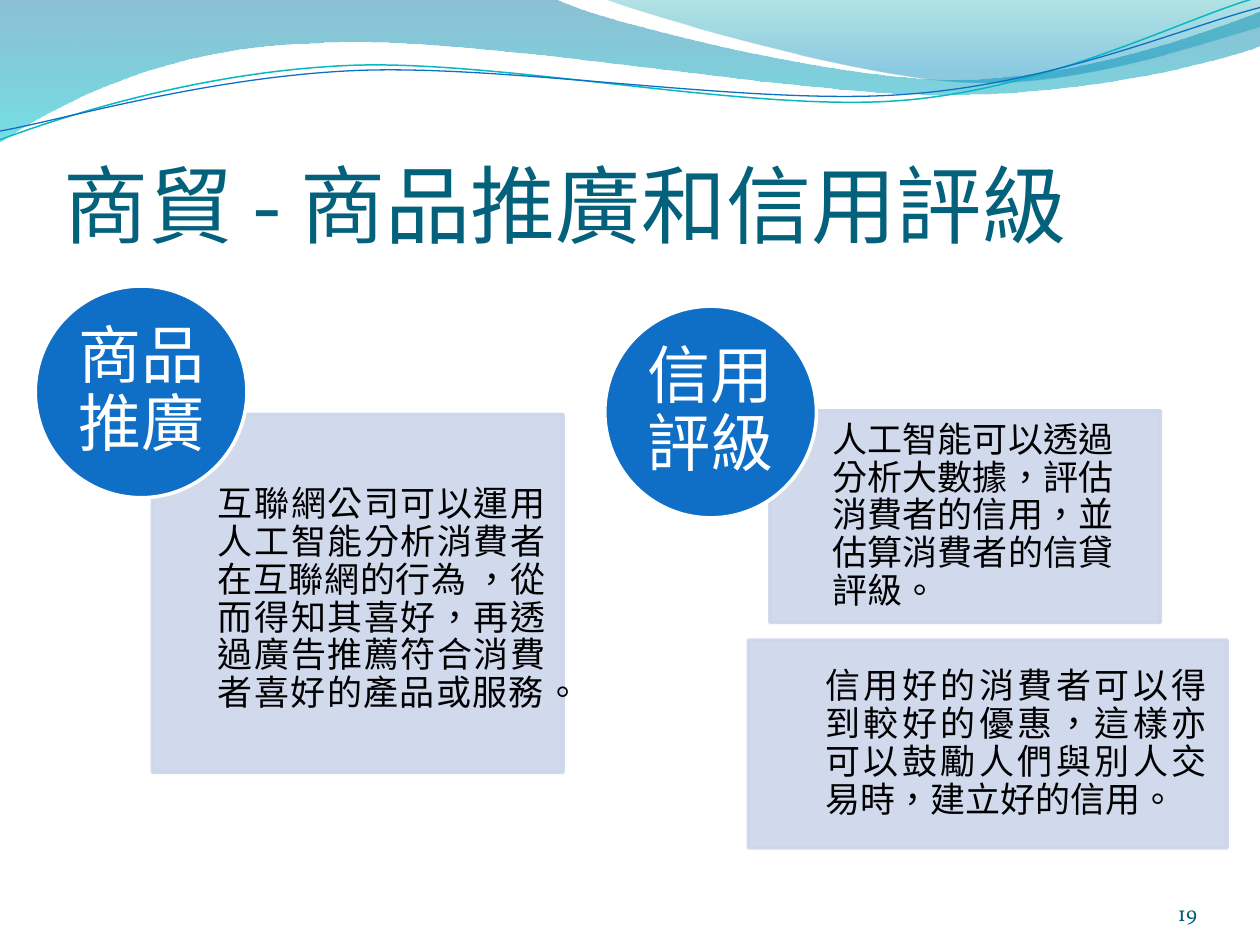
from dataclasses import dataclass
from itertools import chain
from math import sqrt

from lxml.etree import Element, SubElement
from pptx import Presentation
from pptx.dml.color import RGBColor
from pptx.enum.lang import MSO_LANGUAGE_ID as Language
from pptx.enum.shapes import MSO_SHAPE as Shape
from pptx.enum.text import MSO_ANCHOR as Anchor, MSO_AUTO_SIZE as AutoSize, PP_ALIGN as Align
from pptx.oxml.ns import qn
from pptx.util import Inches, Pt


@dataclass(frozen=True)
class Theme:
    title: str = "04617B"
    accent: str = "0F6FC6"
    panel: str = "CCD5EA"
    light: str = "FFFFFF"
    text: str = "000000"
    number: str = "045D75"
    teal_line: str = "0AB8BF"
    sans: str = "Noto Sans CJK SC"
    serif: str = "Vollkorn"
    title_size: float = 48.6
    circle_size: float = 36
    body_size: float = 20
    number_size: float = 12


THEME = Theme()
CIRCLE = 1.68
UNITS_PER_INCH = 1000

# Each wave is a start point followed by segments: one point for a line,
# three (two controls and an end) for a Bezier curve.
BROAD_WAVE = [
    (0, 0), [(4.4, -0.01)],
    [(4.76, 0.17), (6.64, 0.63), (7.58, 0.63)],
    [(8.53, 0.63), (9.58, 0.26), (10, 0.09)],
    [(10.01, 0.36)],
    [(9.83, 0.44), (8.7, 0.76), (7.46, 0.75)],
    [(6.22, 0.75), (3.82, 0.28), (2.57, 0.34)],
    [(1.29, 0.36), (0.46, 0.83), (-0.01, 1.13)],
    [(0, 0)],
]
RIGHT_WAVE = [
    (4.79, -0.01),
    [(5.09, 0.11), (6.82, 0.62), (7.69, 0.65)],
    [(8.56, 0.69), (9.61, 0.32), (10, 0.21)],
    [(10, 0)],
    [(4.79, -0.01)],
]
TEAL_CURVE = [
    (0, 1.11),
    [(0.48, 0.93), (1.58, 0.57), (2.77, 0.52)],
    [(3.95, 0.47), (5.93, 0.89), (7.13, 0.8)],
    [(8.33, 0.71), (9.38, 0.15), (9.98, -0.02)],
]
BLUE_CURVE = [
    (0, 1.04),
    [(0.47, 0.96), (1.64, 0.61), (2.83, 0.56)],
    [(4.03, 0.51), (5.97, 0.84), (7.17, 0.75)],
    [(8.36, 0.67), (9.41, 0.21), (10, 0.06)],
]


def rgb(color):
    return RGBColor.from_string(color)


def set_alpha(parent, percent):
    """Make every RGB colour under an XML element partly transparent."""
    for color in parent.iter(qn("a:srgbClr")):
        SubElement(color, qn("a:alpha")).set("val", str(percent * 1000))


def add_outline(slide, outline, close):
    """Add a freeform, then join each group of three points into a Bezier curve."""
    start, *segments = outline
    points = [(x * UNITS_PER_INCH, y * UNITS_PER_INCH)
              for x, y in chain([start], *segments)]
    builder = slide.shapes.build_freeform(*points[0], scale=Inches(1) / UNITS_PER_INCH)
    builder.add_line_segments(points[1:], close=close)
    shape = builder.convert_to_shape()
    shape.shadow.inherit = False
    lines = iter(list(shape._element.iter(qn("a:lnTo"))))
    for segment in segments:
        group = [next(lines) for _ in segment]
        if len(group) == 3:
            curve = Element(qn("a:cubicBezTo"))
            group[0].addprevious(curve)
            for line in group:
                curve.append(line[0])
                line.getparent().remove(line)
    return shape


def add_wave(slide, outline, stops):
    """Add a wave filled from top to bottom; stops are (position, colour, opacity)."""
    shape = add_outline(slide, outline, close=True)
    shape.line.fill.background()
    shape.fill.gradient()
    shape.fill.gradient_angle = 270
    for stop, (position, color, opacity) in zip(shape.fill.gradient_stops, stops):
        stop.position = position
        stop.color.rgb = rgb(color)
        set_alpha(stop.color._xFill, opacity)


def add_curve(slide, outline, color, width):
    shape = add_outline(slide, outline, close=False)
    shape.fill.background()
    shape.line.color.rgb = rgb(color)
    shape.line.width = Pt(width)


def fill_text(frame, text, size, color, font=THEME.sans, align=Align.LEFT,
              anchor=Anchor.MIDDLE, insets=(0, 0, 0, 0), spacing=None):
    frame.word_wrap = True
    frame.auto_size = AutoSize.NONE
    frame.vertical_anchor = anchor
    (frame.margin_left, frame.margin_top,
     frame.margin_right, frame.margin_bottom) = map(Inches, insets)
    paragraph = frame.paragraphs[0]
    paragraph.alignment = align
    paragraph.line_spacing = spacing
    run = paragraph.add_run()
    run.text = text
    run.font.name = font
    run.font.size = Pt(size)
    run.font.color.rgb = rgb(color)
    run.font.language_id = Language.TRADITIONAL_CHINESE
    SubElement(run.font._element, qn("a:ea")).set("typeface", font)


def add_text(slide, box, text, size, color, **options):
    textbox = slide.shapes.add_textbox(*map(Inches, box))
    fill_text(textbox.text_frame, text, size, color, **options)


def add_block(slide, kind, box, fill, line):
    shape = slide.shapes.add_shape(kind, *map(Inches, box))
    shape.shadow.inherit = False
    shape.fill.solid()
    shape.fill.fore_color.rgb = rgb(fill)
    shape.line.color.rgb = rgb(line)
    shape.line.width = Pt(2)
    return shape


def add_panel(slide, box, indent, text, inset, align=Align.JUSTIFY, drop=0):
    """Add a panel whose text starts after indent and sits drop below the middle."""
    left, top, width, height = box
    panel = add_block(slide, Shape.RECTANGLE, box, THEME.panel, THEME.panel)
    set_alpha(panel._element.spPr, 90)
    add_text(slide, (left + indent, top + drop, width - indent, height), text,
             THEME.body_size, THEME.text, align=align,
             insets=(0, inset, inset, inset), spacing=0.9)


def add_circle(slide, left, top, text):
    add_block(slide, Shape.OVAL, (left, top, CIRCLE, CIRCLE), THEME.accent, THEME.light)
    side = CIRCLE / sqrt(2)
    margin = (CIRCLE - side) / 2
    add_text(slide, (left + margin, top + margin, side, side), text,
             THEME.circle_size, THEME.light, align=Align.CENTER, spacing=0.9)


def add_title(slide, text):
    title = slide.shapes.title
    title.left, title.top, title.width, title.height = map(Inches, (0.5, 0.77, 9, 1.25))
    fill_text(title.text_frame, text, THEME.title_size, THEME.title,
              anchor=Anchor.BOTTOM, insets=(0, 0.05, 0, 0))


def main():
    presentation = Presentation()
    presentation.slide_width, presentation.slide_height = Inches(10), Inches(7.5)
    slide = presentation.slides.add_slide(presentation.slide_layouts[5])

    add_wave(slide, BROAD_WAVE, [(0, "0074A1", 45), (1, "00C6CF", 55)])
    add_wave(slide, RIGHT_WAVE, [(0, "00A1A9", 30), (0.8, "008BBF", 45)])
    add_curve(slide, TEAL_CURVE, THEME.teal_line, 0.85)
    add_curve(slide, BLUE_CURVE, THEME.accent, 0.75)
    add_title(slide, "商貿 - 商品推廣和信用評級")

    add_panel(slide, (1.21, 3.29, 3.26, 2.84), 0.52,
              "互聯網公司可以運用人工智能分析消費者在互聯網的行為 ，從而得知其喜好，"
              "再透過廣告推薦符合消費者喜好的產品或服務。", 0.14, drop=0.05)
    add_circle(slide, 0.28, 2.27, "商品推廣")

    add_panel(slide, (6.11, 3.26, 3.1, 1.68), 0.5,
              "人工智能可以透過分析大數據，評估消費者的信用，並估算消費者的信貸評級。",
              0.16, align=Align.LEFT)
    add_panel(slide, (5.94, 5.08, 3.8, 1.65), 0.61,
              "信用好的消費者可以得到較好的優惠，這樣亦可以鼓勵人們與別人交易時，"
              "建立好的信用。", 0.16)
    add_circle(slide, 4.8, 2.43, "信用評級")

    add_text(slide, (8.67, 6.95, 0.83, 0.4), "19", THEME.number_size, THEME.number,
             font=THEME.serif, align=Align.RIGHT, anchor=Anchor.BOTTOM)
    presentation.save("out.pptx")


if __name__ == "__main__":
    main()
